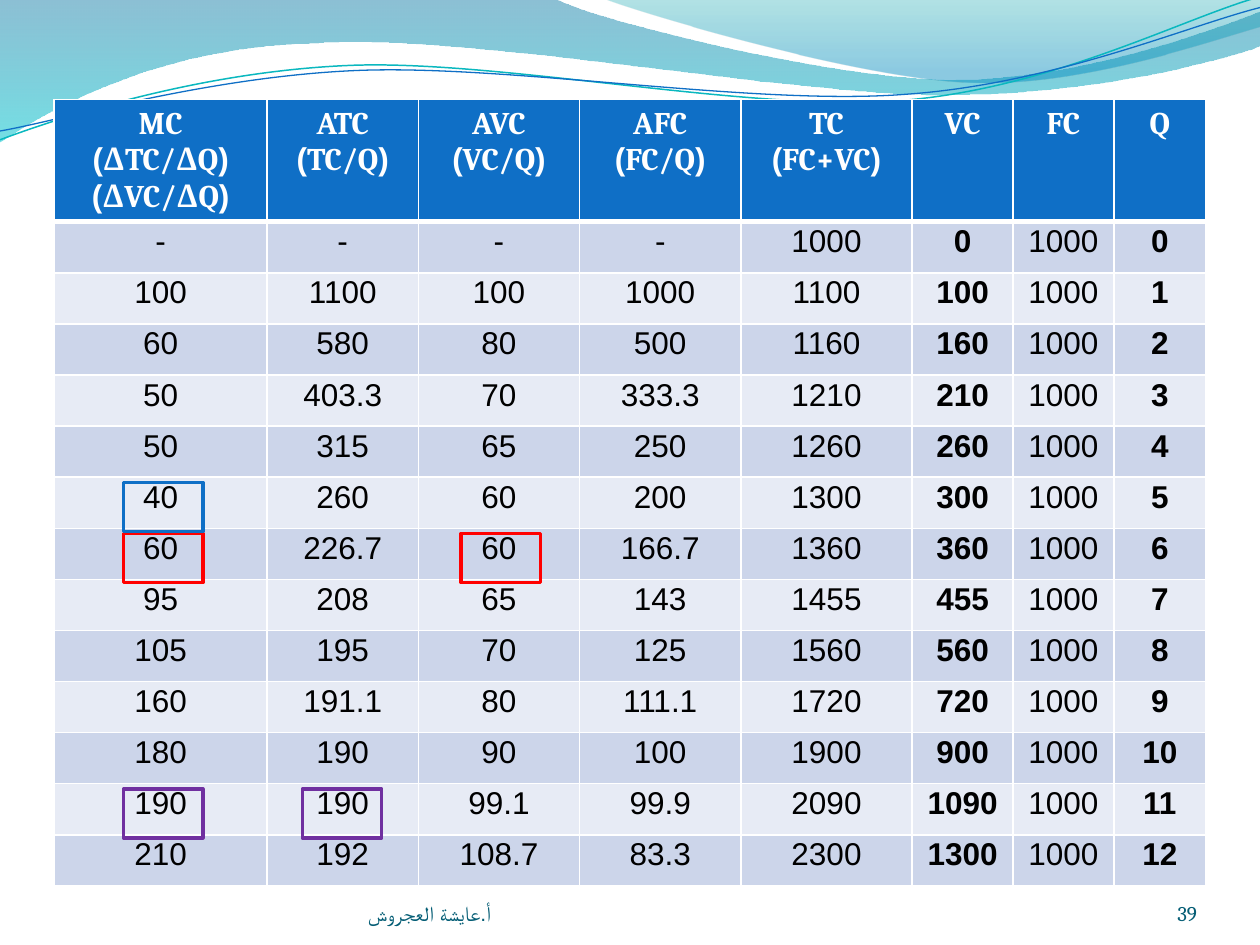
"""Cost schedule slide: a table of short-run costs with key cells outlined."""
from itertools import chain, product

from lxml.etree import SubElement
from pptx import Presentation
from pptx.dml.color import RGBColor
from pptx.enum.shapes import MSO_SHAPE as Shape
from pptx.enum.text import MSO_ANCHOR as Anchor, PP_ALIGN as Align
from pptx.oxml import parse_xml
from pptx.oxml.ns import nsdecls, qn
from pptx.util import Inches, Pt

COLORS = {
    "blue": "0F6FC6", "teal": "0AB8BF", "red": "FF0000", "purple": "7030A0",
    "white": "FFFFFF", "black": "000000", "footer": "045D75",
    "odd": "CCD5EA", "even": "E7EBF5",
    "wave_top": "0074A1", "wave_bottom": "00C6CF",
    "crest_top": "00A1A9", "crest_bottom": "008BBF",
}
FONT, COMPLEX_FONT = "Cambria", "Arial"
TABLE_LEFT, TABLE_TOP = Inches(0.43), Inches(0.79)
COLUMNS = [Inches(w) for w in (1.69, 1.2, 1.28, 1.28, 1.36, 0.8, 0.8, 0.73)]
HEADER_HEIGHT, ROW_HEIGHT = Inches(0.96), Pt(29.2)
BOLD_COLUMNS = (5, 7)
HEADERS = ["MC\n(ΔTC/ΔQ) (ΔVC/ΔQ)", "ATC\n(TC/Q)", "AVC\n(VC/Q)",
           "AFC\n(FC/Q)", "TC\n(FC+VC)", "VC", "FC", "Q"]
COSTS = """
- - - - 1000 0 1000 0
100 1100 100 1000 1100 100 1000 1
60 580 80 500 1160 160 1000 2
50 403.3 70 333.3 1210 210 1000 3
50 315 65 250 1260 260 1000 4
40 260 60 200 1300 300 1000 5
60 226.7 60 166.7 1360 360 1000 6
95 208 65 143 1455 455 1000 7
105 195 70 125 1560 560 1000 8
160 191.1 80 111.1 1720 720 1000 9
180 190 90 100 1900 900 1000 10
190 190 99.1 99.9 2090 1090 1000 11
210 192 108.7 83.3 2300 1300 1000 12
"""
MC_LEFT, ATC_LEFT, AVC_LEFT = 0.98, 2.4, 3.66
HIGHLIGHTS = [(6, MC_LEFT, "red"), (11, MC_LEFT, "purple"), (6, AVC_LEFT, "red"),
              (11, ATC_LEFT, "purple"), (5, MC_LEFT, "blue")]
WAVE = [(0, 0), (4.4, -0.01),
        (4.76, 0.17, 6.64, 0.63, 7.58, 0.63), (8.53, 0.63, 9.58, 0.26, 10, 0.09),
        (10.01, 0.36), (9.83, 0.44, 8.7, 0.76, 7.46, 0.75),
        (6.22, 0.75, 3.82, 0.28, 2.57, 0.34), (1.29, 0.36, 0.46, 0.83, -0.01, 1.13),
        (0, 0)]
CREST = [(4.79, -0.01), (5.09, 0.11, 6.82, 0.62, 7.69, 0.65),
         (8.56, 0.69, 9.61, 0.32, 10, 0.21), (10, 0), (4.79, -0.01)]
TEAL_LINE = [(0, 1.11), (0.48, 0.93, 1.58, 0.57, 2.77, 0.52),
             (3.95, 0.47, 5.93, 0.89, 7.13, 0.8), (8.33, 0.71, 9.38, 0.15, 9.98, -0.02)]
BLUE_LINE = [(0, 1.04), (0.47, 0.96, 1.64, 0.61, 2.83, 0.56),
             (4.03, 0.51, 5.97, 0.84, 7.17, 0.75), (8.36, 0.67, 9.41, 0.21, 10, 0.06)]


def rgb(name):
    """Look up a named colour."""
    return RGBColor.from_string(COLORS[name])


def bend(outline, segments):
    """Turn each run of three straight steps into one cubic curve."""
    steps = iter(list(outline._element.iter(qn("a:lnTo"))))
    for segment in segments[1:]:
        first = next(steps)
        if len(segment) == 6:
            first.tag_name = None
            curve = parse_xml(f"<a:cubicBezTo {nsdecls('a')}/>")
            first.addprevious(curve)
            for step in (first, next(steps), next(steps)):
                curve.append(step[0])
                step.getparent().remove(step)


def add_outline(slide, segments, close):
    """Draw a freeform from corner points and cubic curves in inches."""
    numbers = list(chain.from_iterable(segments))
    points = [(Inches(x), Inches(y)) for x, y in zip(numbers[::2], numbers[1::2])]
    builder = slide.shapes.build_freeform(*points[0])
    builder.add_line_segments(points[1:], close=close)
    outline = builder.convert_to_shape()
    outline.shadow.inherit = False
    bend(outline, segments)
    return outline


def add_band(slide, segments, stops):
    """Add a closed wave with a translucent top-to-bottom gradient."""
    band = add_outline(slide, segments, True)
    band.line.fill.background()
    band.fill.gradient()
    band.fill.gradient_angle = 270
    for stop, (position, color, _) in zip(band.fill.gradient_stops, stops):
        stop.position = position
        stop.color.rgb = rgb(color)
    tints = band._element.spPr.iter(qn("a:srgbClr"))
    for tint, (_, _, opacity) in zip(tints, stops):
        SubElement(tint, qn("a:alpha")).set("val", str(opacity * 1000))


def add_ripple(slide, segments, color, width):
    """Add an open wavy line."""
    ripple = add_outline(slide, segments, False)
    ripple.fill.background()
    ripple.line.color.rgb = rgb(color)
    ripple.line.width = Pt(width)


def style_run(run, size, color, bold=False):
    """Set the Latin and complex-script fonts of one run, without kerning."""
    run.font.name, run.font.size, run.font.bold = FONT, Pt(size), bold
    run.font.color.rgb = rgb(color)
    properties = run._r.get_or_add_rPr()
    properties.set("kern", "0")
    SubElement(properties, qn("a:cs")).set("typeface", COMPLEX_FONT)


def fill_cell(cell, text, fill, color, bold):
    """Write centred right-to-left text on a solid fill."""
    cell.fill.solid()
    cell.fill.fore_color.rgb = rgb(fill)
    cell.text_frame.text = text
    for paragraph in cell.text_frame.paragraphs:
        paragraph.alignment = Align.CENTER
        paragraph._p.get_or_add_pPr().set("rtl", "1")
        for run in paragraph.runs:
            style_run(run, 18, color, bold)


def underline_cell(cell):
    """Give a header cell its thick white bottom border."""
    cell._tc.get_or_add_tcPr().insert(0, parse_xml(
        f'<a:lnB {nsdecls("a")} w="{Pt(3)}"><a:solidFill>'
        f'<a:srgbClr val="{COLORS["white"]}"/></a:solidFill></a:lnB>'))


def add_cost_table(slide):
    """Add the cost schedule with its header row."""
    costs = [line.split() for line in COSTS.strip().splitlines()]
    height = HEADER_HEIGHT + ROW_HEIGHT * len(costs)
    table = slide.shapes.add_table(len(costs) + 1, len(COLUMNS), TABLE_LEFT, TABLE_TOP,
                                   sum(COLUMNS), height).table
    for column, width in zip(table.columns, COLUMNS):
        column.width = width
    for index, row in enumerate(table.rows):
        row.height = ROW_HEIGHT if index else HEADER_HEIGHT
    for column, header in enumerate(HEADERS):
        fill_cell(table.cell(0, column), header, "blue", "white", True)
        underline_cell(table.cell(0, column))
    for row, column in product(range(len(costs)), range(len(COLUMNS))):
        cell = table.cell(row + 1, column)
        fill_cell(cell, costs[row][column], "even" if row % 2 else "odd", "black",
                  column in BOLD_COLUMNS)
        cell.margin_top = Inches(0.02)


def add_highlight(slide, quantity, left, color):
    """Outline a cost in the row of one quantity."""
    top = TABLE_TOP + HEADER_HEIGHT + ROW_HEIGHT * quantity + Inches(0.05)
    frame = slide.shapes.add_shape(Shape.RECTANGLE, Inches(left), top,
                                   Inches(0.63), Inches(0.39))
    frame.shadow.inherit = False
    frame.fill.background()
    frame.line.color.rgb = rgb(color)
    frame.line.width = Pt(2)


def add_footer(slide, text, left, width, alignment):
    """Add a footer text at the bottom of the slide."""
    footer = slide.shapes.add_textbox(Inches(left), Inches(6.95), Inches(width), Inches(0.4))
    frame = footer.text_frame
    frame.word_wrap, frame.vertical_anchor = True, Anchor.BOTTOM
    frame.margin_left = frame.margin_right = frame.margin_top = frame.margin_bottom = 0
    frame.text = text
    frame.paragraphs[0].alignment = alignment
    style_run(frame.paragraphs[0].runs[0], 12, "footer")


def main():
    """Build and save the slide."""
    deck = Presentation()
    deck.slide_width, deck.slide_height = Inches(10), Inches(7.5)
    slide = deck.slides.add_slide(deck.slide_layouts[6])
    add_band(slide, WAVE, [(0, "wave_top", 45), (1, "wave_bottom", 55)])
    add_band(slide, CREST, [(0, "crest_top", 30), (0.8, "crest_bottom", 45)])
    add_ripple(slide, TEAL_LINE, "teal", 0.85)
    add_ripple(slide, BLUE_LINE, "blue", 0.75)
    add_cost_table(slide)
    add_footer(slide, "أ.عايشة العجروش", 2.92, 3.67, Align.LEFT)
    add_footer(slide, "39", 8.67, 0.83, Align.RIGHT)
    for quantity, left, color in HIGHLIGHTS:
        add_highlight(slide, quantity, left, color)
    deck.save("out.pptx")


if __name__ == "__main__":
    main()
